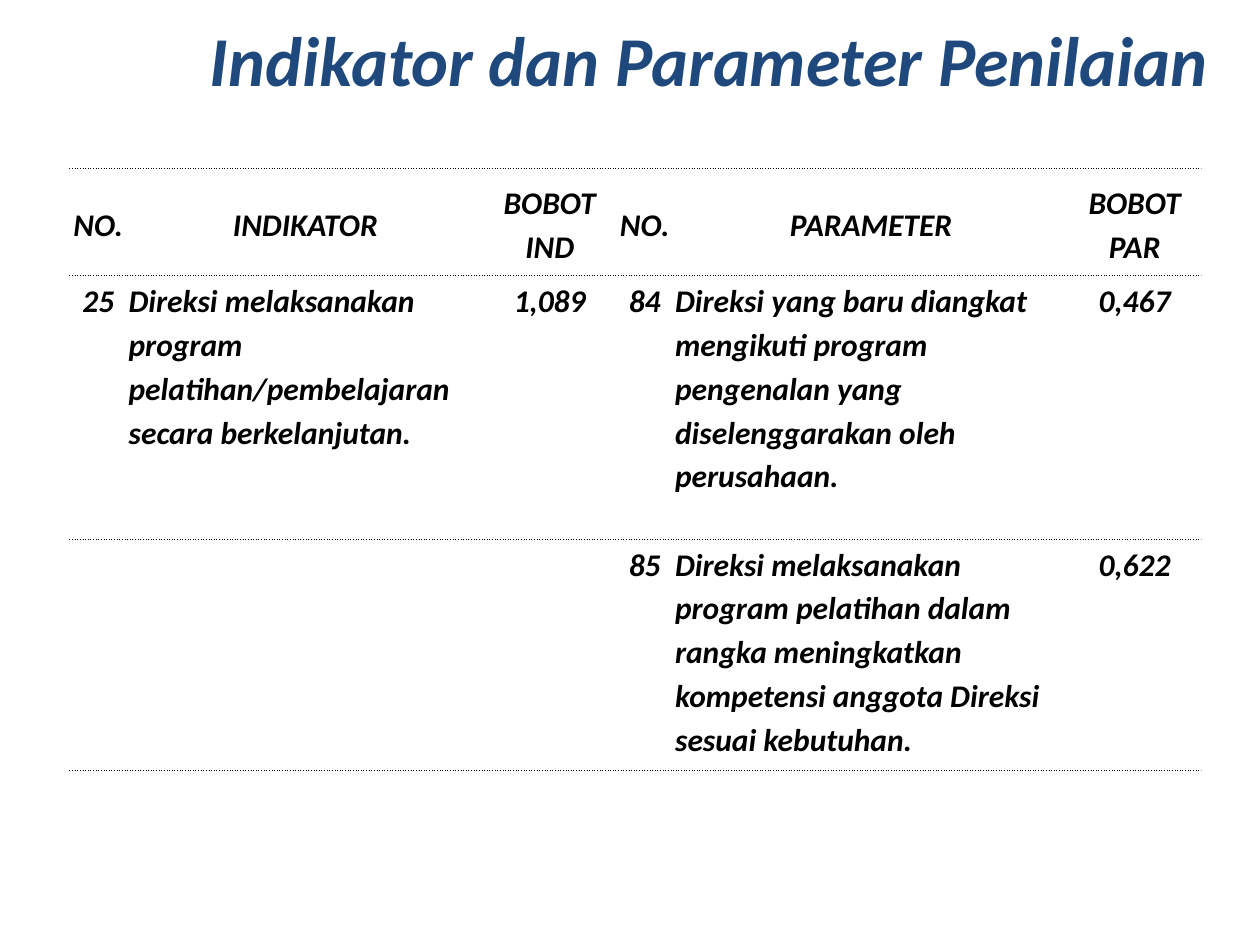
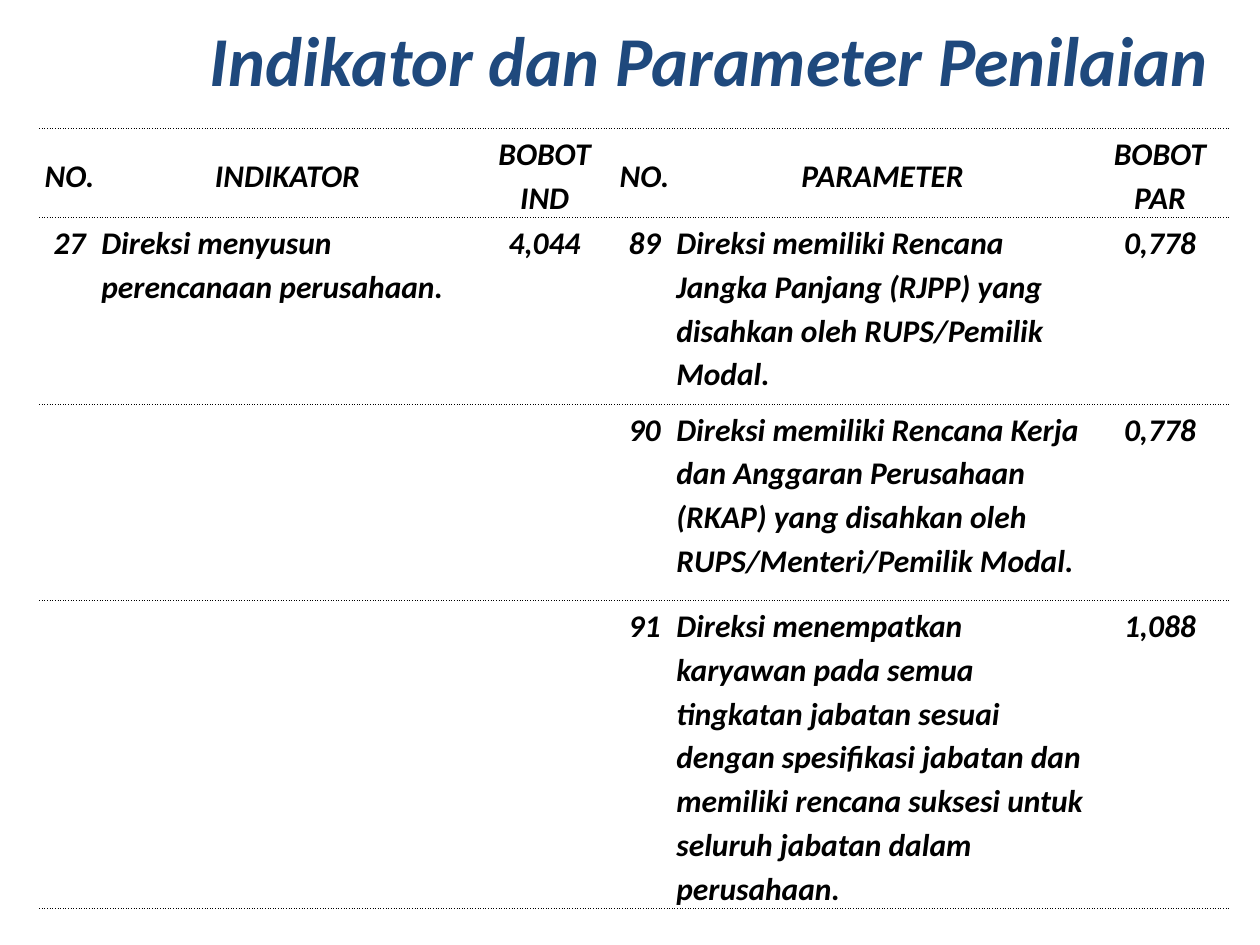
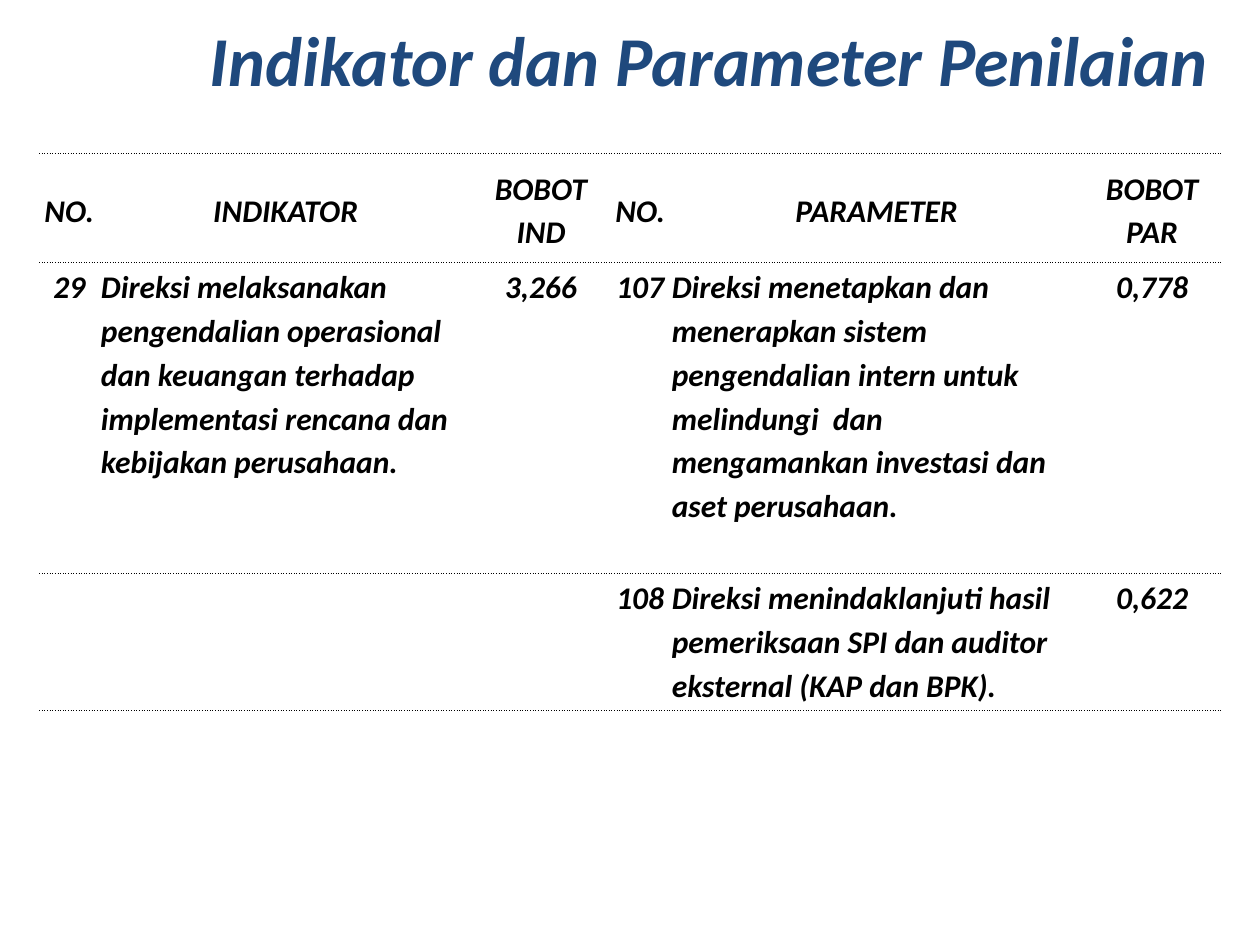
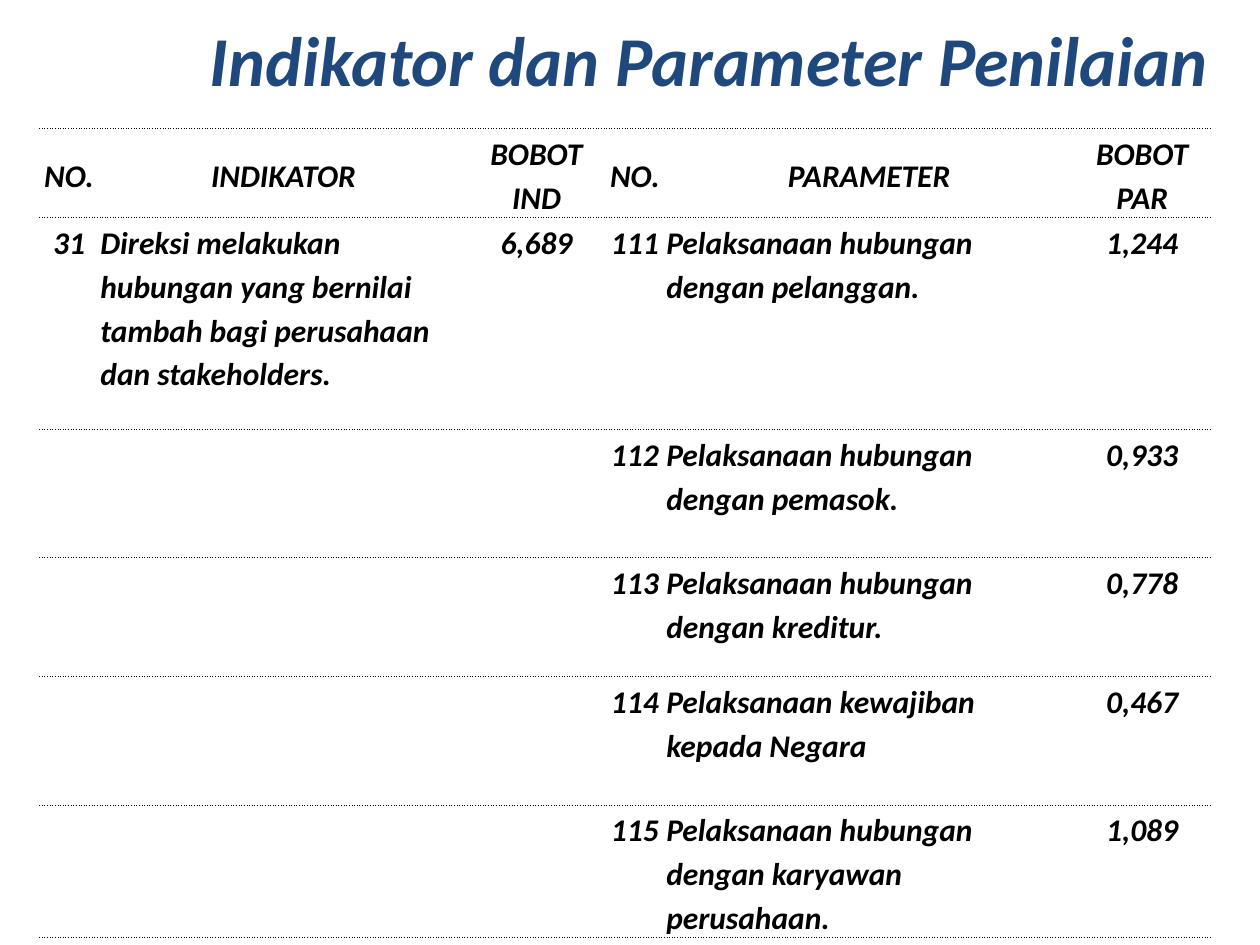
from lxml import etree
from pptx import Presentation
from pptx.dml.color import RGBColor
from pptx.enum.text import MSO_ANCHOR, PP_ALIGN
from pptx.oxml.ns import qn
from pptx.util import Cm, Pt

LEFT, CENTER, RIGHT = PP_ALIGN.LEFT, PP_ALIGN.CENTER, PP_ALIGN.RIGHT
TOP, MIDDLE = MSO_ANCHOR.TOP, MSO_ANCHOR.MIDDLE

# Shared style
NAVY = RGBColor(0x1F, 0x49, 0x7D)
BLACK = RGBColor(0x00, 0x00, 0x00)
FONT = "Calibri"
TITLE = "Indikator dan Parameter Penilaian"
TITLE_BOX = (Cm(1.75), Cm(0.2), Cm(22.86), Cm(1.83))
TITLE_ONLY = 5
HEADER = ("NO.", "INDIKATOR", "BOBOT IND", "NO.", "PARAMETER", "BOBOT PAR")
COLUMN_PERCENTS = (5.1, 31.5, 11.7, 5.1, 34.9, 11.7)
TEXT_COLUMNS = (1, 4)
NO_INDICATOR = ("", "", "")
CELL_MARGIN = Cm(0.03)

# Each slide: table left, top, width and row heights in cm, then the body rows
SLIDES = [
    {"left": 1.4, "top": 3.4, "width": 22.81, "heights": (2.16, 5.31, 4.67),
     "indicator": ("25", "Direksi melaksanakan program pelatihan/pembelajaran "
                   "secara berkelanjutan.", "1,089"),
     "parameters": [
         ("84", "Direksi yang baru diangkat mengikuti program pengenalan yang "
          "diselenggarakan oleh perusahaan.", "0,467"),
         ("85", "Direksi melaksanakan program pelatihan dalam rangka meningkatkan "
          "kompetensi anggota Direksi sesuai kebutuhan.", "0,622")]},
    {"left": 0.79, "top": 2.59, "width": 24, "heights": (1.75, 3.76, 3.96, 6.1),
     "indicator": ("27", "Direksi menyusun perencanaan perusahaan.", "4,044"),
     "parameters": [
         ("89", "Direksi memiliki Rencana Jangka Panjang (RJPP) yang disahkan oleh "
          "RUPS/Pemilik Modal.", "0,778"),
         ("90", "Direksi memiliki Rencana Kerja dan Anggaran Perusahaan (RKAP) yang "
          "disahkan oleh RUPS/Menteri/Pemilik Modal.", "0,778"),
         ("91", "Direksi menempatkan karyawan pada semua tingkatan jabatan sesuai "
          "dengan spesifikasi jabatan dan memiliki rencana suksesi untuk seluruh "
          "jabatan dalam perusahaan.", "1,088")]},
    {"left": 0.79, "top": 3.1, "width": 23.83, "heights": (2.18, 6.27, 2.77),
     "indicator": ("29", "Direksi melaksanakan pengendalian operasional dan keuangan "
                   "terhadap implementasi rencana dan kebijakan perusahaan.", "3,266"),
     "parameters": [
         ("107", "Direksi menetapkan dan menerapkan sistem pengendalian intern untuk "
          "melindungi  dan mengamankan investasi dan aset perusahaan.", "0,778"),
         ("108", "Direksi menindaklanjuti hasil pemeriksaan SPI dan auditor "
          "eksternal (KAP dan BPK).", "0,622")]},
    {"left": 0.79, "top": 2.59, "width": 23.62,
     "heights": (1.75, 4.27, 2.59, 2.39, 2.59, 1.75),
     "indicator": ("31", "Direksi melakukan hubungan yang bernilai tambah bagi "
                   "perusahaan dan stakeholders.", "6,689"),
     "parameters": [
         ("111", "Pelaksanaan hubungan dengan pelanggan.", "1,244"),
         ("112", "Pelaksanaan hubungan dengan pemasok.", "0,933"),
         ("113", "Pelaksanaan hubungan dengan kreditur.", "0,778"),
         ("114", "Pelaksanaan kewajiban kepada Negara", "0,467"),
         ("115", "Pelaksanaan hubungan dengan karyawan perusahaan.", "1,089")]},
]


def write_text(text_frame, text, size=18, color=BLACK, align=LEFT, line_spacing=1.0):
    paragraph = text_frame.paragraphs[0]
    paragraph.alignment = align
    paragraph.line_spacing = line_spacing
    paragraph.space_before = Pt(0)
    run = paragraph.add_run()
    run.text = text
    font = run.font
    font.name, font.size, font.color.rgb = FONT, Pt(size), color
    font.bold = font.italic = True


def set_borders(cell):
    """Dotted lines above and below, none at the sides."""
    properties = cell._tc.get_or_add_tcPr()
    for side in ("lnL", "lnR"):
        line = etree.SubElement(properties, qn(f"a:{side}"), w="0")
        etree.SubElement(line, qn("a:noFill"))
    for side in ("lnT", "lnB"):
        line = etree.SubElement(properties, qn(f"a:{side}"), w=str(Pt(0.5)))
        fill = etree.SubElement(line, qn("a:solidFill"))
        etree.SubElement(fill, qn("a:srgbClr"), val=str(BLACK))
        etree.SubElement(line, qn("a:prstDash"), val="dot")


def format_cell(cell, text, align, anchor):
    set_borders(cell)
    cell.fill.background()
    cell.margin_left = cell.margin_right = cell.margin_top = CELL_MARGIN
    cell.margin_bottom = 0
    cell.vertical_anchor = anchor
    if text:
        write_text(cell.text_frame, text, align=align, line_spacing=1.14)


def add_title(slide, box):
    title = slide.shapes.title
    title.left, title.top, title.width, title.height = box
    title.text_frame.word_wrap = True
    title.text_frame.vertical_anchor = TOP
    write_text(title.text_frame, TITLE, size=40, color=NAVY, align=RIGHT)


def add_score_table(slide, left, top, width, heights, indicator, parameters):
    # The indicator stands beside its first parameter only
    rows = [HEADER]
    for index, parameter in enumerate(parameters):
        rows.append((NO_INDICATOR if index else indicator) + parameter)

    table = slide.shapes.add_table(len(rows), len(HEADER), Cm(left), Cm(top),
                                   Cm(width), Cm(sum(heights))).table
    table.first_row = table.horz_banding = False
    for column, percent in zip(table.columns, COLUMN_PERCENTS):
        column.width = Cm(width * percent / 100)
    for row, height in zip(table.rows, heights):
        row.height = Cm(height)

    for row_index, values in enumerate(rows):
        is_header = row_index == 0
        for column_index, value in enumerate(values):
            is_prose = column_index in TEXT_COLUMNS and not is_header
            format_cell(table.cell(row_index, column_index), value,
                        align=LEFT if is_prose else CENTER,
                        anchor=MIDDLE if is_header else TOP)


def main():
    presentation = Presentation()
    presentation.slide_width, presentation.slide_height = Cm(25.4), Cm(19.05)
    for content in SLIDES:
        slide = presentation.slides.add_slide(presentation.slide_layouts[TITLE_ONLY])
        add_title(slide, TITLE_BOX)
        add_score_table(slide, **content)
    presentation.save("out.pptx")


if __name__ == "__main__":
    main()
